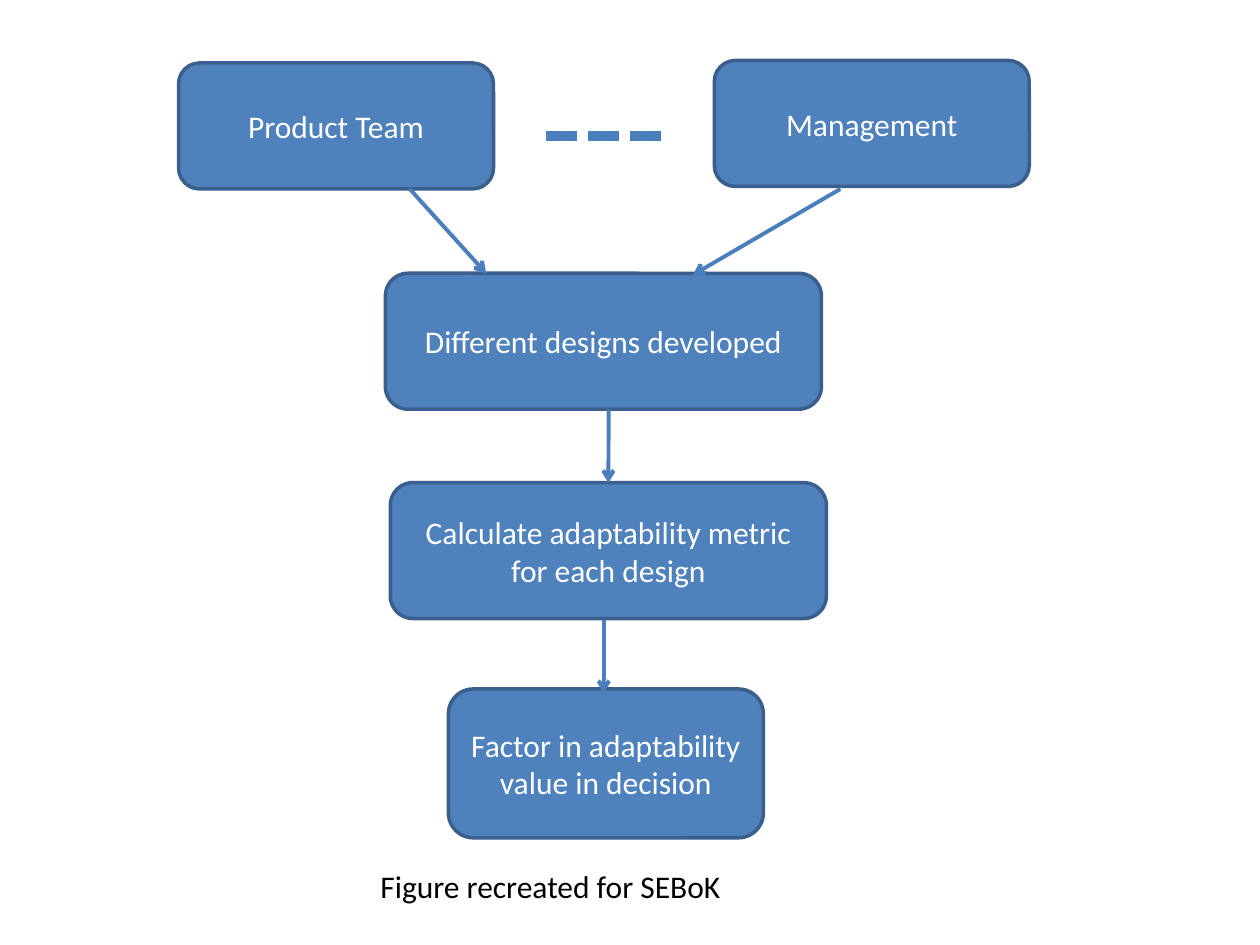
"""Build a flowchart slide on factoring adaptability into design decisions."""
from lxml import etree
from pptx import Presentation
from pptx import util as u
from pptx.dml.color import RGBColor
from pptx.enum import dml, shapes, text
from pptx.oxml import ns

COLORS = {"fill": "4F81BD", "border": "3A5F8C", "arrow": "4B7EBC",
          "light": "FFFFFF", "dark": "000000"}


def write(shape, words, color, alignment):
    frame = shape.text_frame
    frame.word_wrap = True
    para = frame.paragraphs[0]
    para.text = words
    para.alignment = alignment
    para.font.name = "Calibri"
    para.font.size = u.Pt(18)
    para.font.color.rgb = RGBColor.from_string(COLORS[color])


def connect(slide, start, end, width):
    line = slide.shapes.add_connector(
        shapes.MSO_CONNECTOR.STRAIGHT, *(u.Cm(value) for value in start + end))
    line.line.color.rgb = RGBColor.from_string(COLORS["arrow"])
    line.line.width = u.Pt(width)
    etree.SubElement(line._element.spPr, ns.qn("a:effectLst"))
    return line


deck = Presentation()
deck.slide_width, deck.slide_height = u.Cm(25.4), u.Cm(19.05)
page = deck.slides.add_slide(deck.slide_layouts[6])

steps = [
    ("Product Team", 3.6, 1.27, 6.35, 2.54),
    ("Calculate adaptability metric for each design", 7.87, 9.73, 8.79, 2.74),
    ("Factor in adaptability value in decision", 9.04, 13.89, 6.35, 3),
    ("Management", 14.4, 1.22, 6.35, 2.54),
    ("Different designs developed", 7.77, 5.51, 8.79, 2.74),
]
boxes = {}
for label, *place in steps:
    box = page.shapes.add_shape(
        shapes.MSO_SHAPE.ROUNDED_RECTANGLE, *(u.Cm(value) for value in place))
    box.shadow.inherit = False
    box.fill.solid()
    box.fill.fore_color.rgb = RGBColor.from_string(COLORS["fill"])
    box.line.color.rgb = RGBColor.from_string(COLORS["border"])
    box.line.width = u.Pt(2)
    box.text_frame.vertical_anchor = text.MSO_ANCHOR.MIDDLE
    write(box, label, "light", text.PP_ALIGN.CENTER)
    boxes[label] = box

dashes = connect(page, (11, 2.74), (13.34, 2.74), 6)
dashes.line.dash_style = dml.MSO_LINE.SQUARE_DOT

arrows = [
    ((8.26, 3.81), (9.8, 5.51), None),
    ((16.94, 3.81), (13.97, 5.54), None),
    ((12.17, 12.5), (12.17, 13.97), None),
    ((12.27, 8.26), (12.27, 9.73), "Calculate adaptability metric for each design"),
]
for start, end, target in arrows:
    arrow = connect(page, start, end, 2.25)
    etree.SubElement(arrow.line._get_or_add_ln(), ns.qn("a:tailEnd"), type="arrow")
    if target:
        arrow.end_connect(boxes[target], 0)

caption = page.shapes.add_textbox(u.Cm(7.42), u.Cm(17.35), u.Cm(12.27), u.Cm(1.02))
write(caption, "Figure recreated for SEBoK", "dark", text.PP_ALIGN.LEFT)
caption.text_frame.auto_size = text.MSO_AUTO_SIZE.SHAPE_TO_FIT_TEXT

deck.save("out.pptx")
